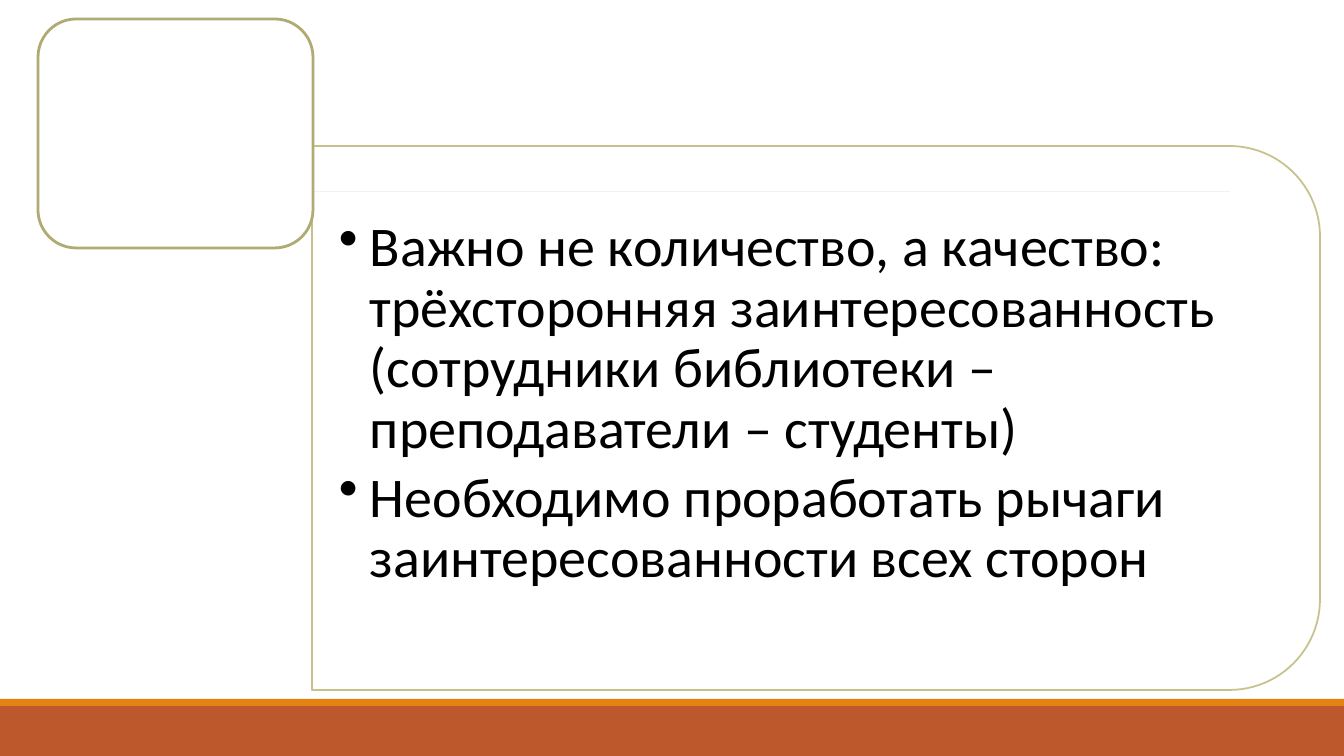
"""Build a slide with a rounded panel of two bullet points and a footer band."""
from dataclasses import dataclass

from lxml import etree
from pptx import Presentation
from pptx import util as u
from pptx.dml.color import RGBColor
from pptx.enum import shapes, text
from pptx.oxml import ns

BULLETS = [
    "Важно не количество, а качество: трёхсторонняя заинтересованность "
    "(сотрудники библиотеки – преподаватели – студенты)",
    "Необходимо проработать рычаги заинтересованности всех сторон",
]
SLIDE_W, SLIDE_H = 1344, 756
FOOTER_TOP, STRIPE_TOP = 706, 699
RULE = (132, 1230, 191)
PANEL = (312, 146, 1008, 544)
BODY = (312, 172, 982, 491)
INSETS = (27, 14, 27, 41)
HANG = 31
BADGE = (38, 19, 275, 229)


@dataclass(frozen=True)
class Theme:
    font: str = "Calibri"
    size: int = 40
    ink: str = "000000"
    paper: str = "FFFFFF"
    footer: str = "BD582C"
    stripe: str = "E48312"
    rule: str = "808080"
    panel_line: str = "C2BC80"
    badge_line: str = "B0AB74"
    panel_alpha: int = 90


THEME = Theme()
KIND = shapes.MSO_SHAPE


def px(n):
    return u.Emu(round(n * 12192000 / SLIDE_W))


def rgb(code):
    return RGBColor.from_string(code)


def add_box(s, kind, box, fill, line=None, width=0):
    sp = s.shapes.add_shape(kind, *map(px, box))
    sp.shadow.inherit = False
    sp.fill.solid()
    sp.fill.fore_color.rgb = rgb(fill)
    if line:
        sp.line.color.rgb = rgb(line)
        sp.line.width = u.Pt(width)
    else:
        sp.line.fill.background()
    return sp


def add_rule(s):
    left, right, y = RULE
    c = s.shapes.add_connector(
        shapes.MSO_CONNECTOR.STRAIGHT, px(left), px(y), px(right), px(y))
    c.line.color.rgb = rgb(THEME.rule)
    c.line.width = u.Pt(0.5)
    etree.SubElement(c._element.spPr, ns.qn("a:effectLst"))


def add_panel(s):
    left, top, w, h = PANEL
    shift = (w - h) / 2
    sp = add_box(s, KIND.ROUND_2_SAME_RECTANGLE, (left + shift, top - shift, h, w),
                 THEME.paper, THEME.panel_line, 1.25)
    sp.rotation = 90
    for color in sp._element.spPr.iter(ns.qn("a:srgbClr")):
        etree.SubElement(color, ns.qn("a:alpha"), val=str(THEME.panel_alpha * 1000))


def add_bullets(s):
    tf = s.shapes.add_textbox(*map(px, BODY)).text_frame
    tf.word_wrap = True
    tf.vertical_anchor = text.MSO_ANCHOR.MIDDLE
    tf.margin_left, tf.margin_top, tf.margin_right, tf.margin_bottom = map(px, INSETS)
    for i, words in enumerate(BULLETS):
        p = tf.add_paragraph() if i else tf.paragraphs[0]
        p.text = words
        p.font.name = THEME.font
        p.font.size = u.Pt(THEME.size)
        p.font.color.rgb = rgb(THEME.ink)
        p.line_spacing = 0.9
        p.space_after = u.Pt(THEME.size * 0.15)
        pPr = p._p.get_or_add_pPr()
        pPr.set("marL", str(px(HANG)))
        pPr.set("indent", str(-px(HANG)))
        bullet = etree.Element(ns.qn("a:buChar"), char="•")
        pPr.find(ns.qn("a:defRPr")).addprevious(bullet)


def main():
    prs = Presentation()
    prs.slide_width, prs.slide_height = px(SLIDE_W), px(SLIDE_H)
    s = prs.slides.add_slide(prs.slide_layouts[6])
    s.background.fill.solid()
    s.background.fill.fore_color.rgb = rgb(THEME.paper)
    bands = [(FOOTER_TOP, SLIDE_H, THEME.footer), (STRIPE_TOP, FOOTER_TOP, THEME.stripe)]
    for top, bottom, color in bands:
        add_box(s, KIND.RECTANGLE, (0, top, SLIDE_W, bottom - top), color)
    add_rule(s)
    add_panel(s)
    add_bullets(s)
    add_box(s, KIND.ROUNDED_RECTANGLE, BADGE, THEME.paper, THEME.badge_line, 2)
    prs.save("out.pptx")


if __name__ == "__main__":
    main()
